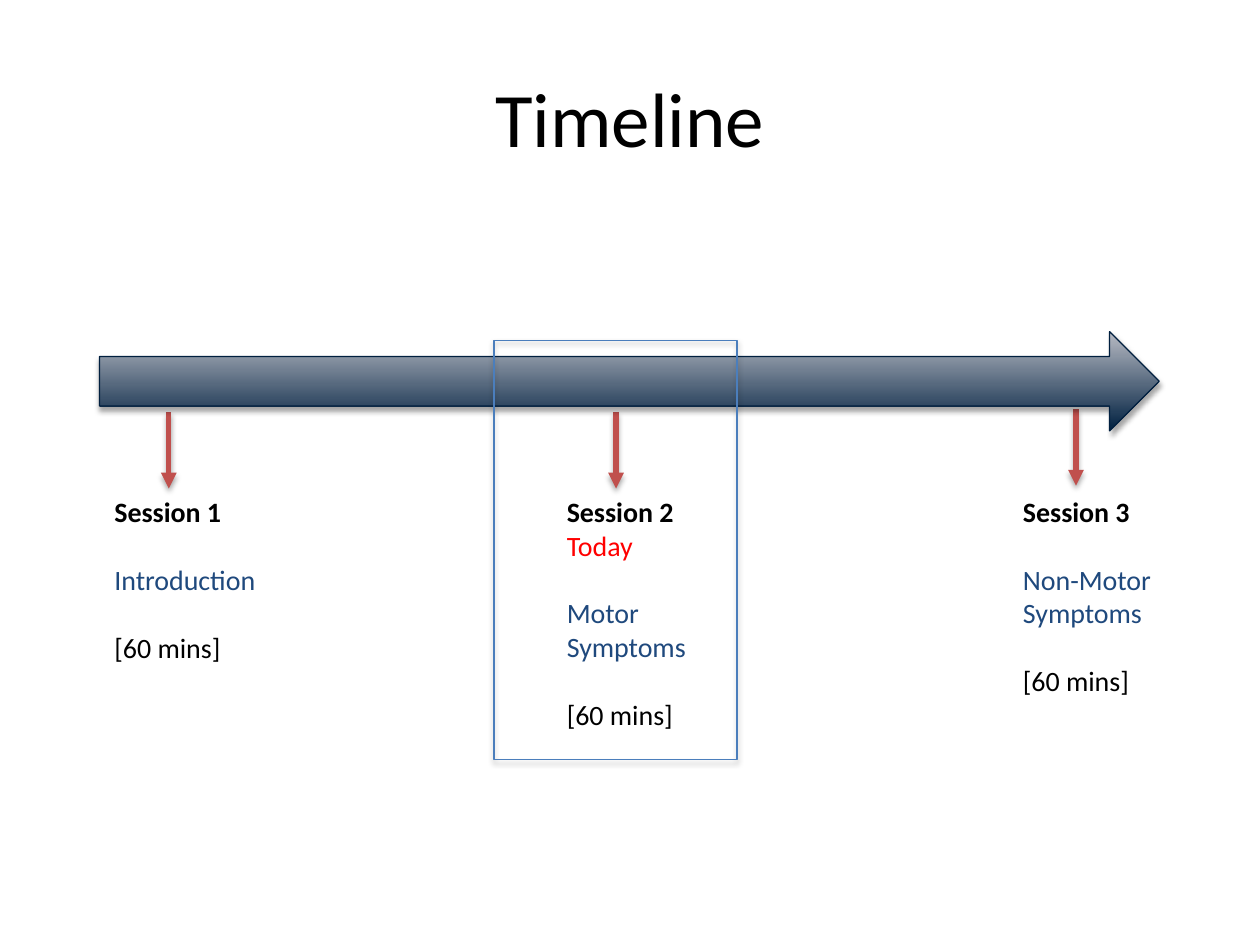
from dataclasses import dataclass

from pptx import Presentation
from pptx.dml.color import RGBColor
from pptx.enum.shapes import MSO_CONNECTOR as Connector, MSO_SHAPE as Preset
from pptx.enum.text import MSO_ANCHOR as Anchor, MSO_AUTO_SIZE as AutoSize, PP_ALIGN as Align
from pptx.oxml import parse_xml
from pptx.oxml.ns import nsdecls
from pptx.shapes.base import BaseShape
from pptx.slide import Slide
from pptx.util import Inches, Length, Pt

WIDTH, HEIGHT = Inches(10), Inches(7.5)
BLACK = RGBColor(0x00, 0x00, 0x00)
RED = RGBColor(0xFF, 0x00, 0x00)
NAVY = RGBColor(0x1F, 0x49, 0x7D)
BRICK = RGBColor(0xC0, 0x50, 0x4D)
FRAME_BLUE = RGBColor(0x4B, 0x7E, 0xBC)
ARROW_EDGE = RGBColor(0x00, 0x1F, 0x3F)
ARROW_DARK = RGBColor(0x00, 0x20, 0x40)
ARROW_LIGHT = RGBColor(0xB8, 0xBB, 0xC4)
FONT = "Calibri"
LINE_GAP = Pt(19.5)


@dataclass(frozen=True)
class Area:
    left: float
    top: float
    width: float
    height: float

    def lengths(self) -> tuple[Length, ...]:
        return (
            Length(WIDTH * self.left),
            Length(HEIGHT * self.top),
            Length(WIDTH * self.width),
            Length(HEIGHT * self.height),
        )


@dataclass(frozen=True)
class Line:
    text: str
    color: RGBColor = BLACK
    bold: bool = False
    gap: bool = False


@dataclass(frozen=True)
class Session:
    area: Area
    pointer_x: float
    pointer_top: float
    lines: tuple[Line, ...]


TEXT_TOP = 0.517
POINTER_LENGTH = 0.081
DURATION = Line("[60 mins]", gap=True)
TITLE_AREA = Area(0.05, 0.04, 0.9, 0.167)
ARROW_AREA = Area(0.079, 0.351, 0.841, 0.105)
TODAY_AREA = Area(0.392, 0.36, 0.193, 0.444)
SESSIONS = (
    Session(
        Area(0.081, TEXT_TOP, 0.164, 0.193), 0.134, 0.436,
        (Line("Session 1", bold=True), Line("Introduction", NAVY, gap=True), DURATION),
    ),
    Session(
        Area(0.44, TEXT_TOP, 0.168, 0.265), 0.489, 0.436,
        (
            Line("Session 2", bold=True),
            Line("Today", RED),
            Line("Motor Symptoms", NAVY, gap=True),
            DURATION,
        ),
    ),
    Session(
        Area(0.802, TEXT_TOP, 0.148, 0.229), 0.854, 0.433,
        (Line("Session 3", bold=True), Line("Non-Motor Symptoms", NAVY, gap=True), DURATION),
    ),
)


def set_all(target: object, values: dict) -> None:
    for name, value in values.items():
        setattr(target, name, value)


def add_shadow(shape: BaseShape) -> None:
    shape._element.spPr.append(parse_xml(
        f'<a:effectLst {nsdecls("a")}>'
        f'<a:outerShdw blurRad="{Pt(3.1)}" dist="{Pt(1.8)}" dir="5400000" rotWithShape="0">'
        '<a:srgbClr val="000000"><a:alpha val="35000"/></a:srgbClr>'
        '</a:outerShdw></a:effectLst>'
    ))


def add_title(slide: Slide, text: str) -> None:
    title = slide.shapes.title
    set_all(title, dict(zip(("left", "top", "width", "height"), TITLE_AREA.lengths())))
    title.text_frame.text = text
    title.text_frame.vertical_anchor = Anchor.MIDDLE
    para = title.text_frame.paragraphs[0]
    para.alignment = Align.CENTER
    set_all(para.runs[0].font, {"name": FONT, "size": Pt(44)})
    para.runs[0].font.color.rgb = BLACK


def add_pointer(slide: Slide, session: Session) -> None:
    x = Length(WIDTH * session.pointer_x)
    top = Length(HEIGHT * session.pointer_top)
    bottom = Length(HEIGHT * (session.pointer_top + POINTER_LENGTH))
    pointer = slide.shapes.add_connector(Connector.STRAIGHT, x, top, x, bottom)
    pointer.line.color.rgb = BRICK
    pointer.line.width = Pt(3)
    pointer.line._get_or_add_ln().append(
        parse_xml(f'<a:tailEnd {nsdecls("a")} type="triangle"/>')
    )
    add_shadow(pointer)


def add_session(slide: Slide, session: Session) -> None:
    frame = slide.shapes.add_textbox(*session.area.lengths()).text_frame
    set_all(frame, {"word_wrap": True, "auto_size": AutoSize.SHAPE_TO_FIT_TEXT})
    for index, line in enumerate(session.lines):
        para = frame.add_paragraph() if index else frame.paragraphs[0]
        if line.gap:
            para.space_before = LINE_GAP
        span = para.add_run()
        span.text = line.text
        set_all(span.font, {"name": FONT, "size": Pt(16), "bold": line.bold})
        span.font.color.rgb = line.color
    add_pointer(slide, session)


def add_outlined(slide: Slide, preset: Preset, area: Area, edge: RGBColor) -> BaseShape:
    shape = slide.shapes.add_shape(preset, *area.lengths())
    shape.fill.background()
    shape.line.color.rgb = edge
    shape.line.width = Pt(0.75)
    add_shadow(shape)
    return shape


def add_time_arrow(slide: Slide) -> None:
    fill = add_outlined(slide, Preset.RIGHT_ARROW, ARROW_AREA, ARROW_EDGE).fill
    fill.gradient()
    fill.gradient_angle = 90
    for stop, position, color in zip(fill.gradient_stops, (0, 1), (ARROW_DARK, ARROW_LIGHT)):
        stop.position = position
        stop.color.rgb = color


def main() -> None:
    deck = Presentation()
    set_all(deck, {"slide_width": WIDTH, "slide_height": HEIGHT})
    page = deck.slides.add_slide(deck.slide_layouts[5])
    add_title(page, "Timeline")
    for session in SESSIONS:
        add_session(page, session)
    add_time_arrow(page)
    add_outlined(page, Preset.RECTANGLE, TODAY_AREA, FRAME_BLUE)
    deck.save("out.pptx")


if __name__ == "__main__":
    main()
